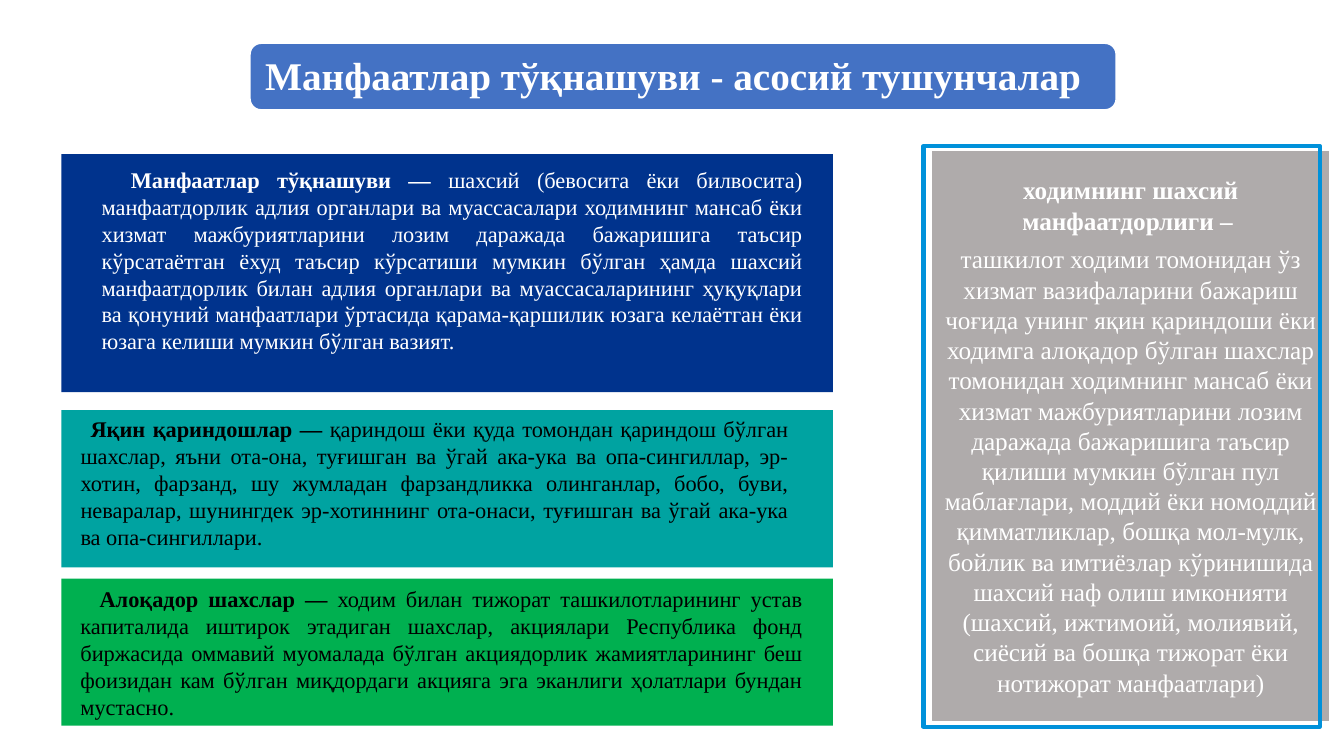
from pptx import Presentation
from pptx.dml.color import RGBColor
from pptx.enum.shapes import MSO_SHAPE
from pptx.enum.text import MSO_ANCHOR, MSO_AUTO_SIZE, PP_ALIGN
from pptx.util import Inches, Pt

RECTANGLE, ROUNDED = MSO_SHAPE.RECTANGLE, MSO_SHAPE.ROUNDED_RECTANGLE
MIDDLE, TOP = MSO_ANCHOR.MIDDLE, MSO_ANCHOR.TOP
LEFT, CENTER, JUSTIFY = PP_ALIGN.LEFT, PP_ALIGN.CENTER, PP_ALIGN.JUSTIFY
FIXED = MSO_AUTO_SIZE.NONE

FONT = "Times New Roman"
COLORS = {
    "white": "FFFFFF", "black": "000000", "banner": "4472C4", "navy": "00338D",
    "teal": "00A3A1", "green": "00B050", "gray": "AFABAB", "frame": "0091DA",
}

TITLE = "Манфаатлар тўқнашуви - асосий тушунчалар"
DEFINITIONS = [
    {
        "term": "Манфаатлар тўқнашуви — ",
        "meaning": "шахсий (бевосита ёки билвосита) манфаатдорлик адлия органлари ва "
                   "муассасалари ходимнинг мансаб ёки хизмат мажбуриятларини лозим даражада "
                   "бажаришига таъсир кўрсатаётган ёхуд таъсир кўрсатиши мумкин бўлган ҳамда "
                   "шахсий манфаатдорлик билан адлия органлари ва муассасаларининг ҳуқуқлари "
                   "ва қонуний манфаатлари ўртасида қарама-қаршилик юзага келаётган ёки юзага "
                   "келиши мумкин бўлган вазият.",
        "fill": "navy", "color": "white", "top": 1.53, "height": 2.36,
        "text_box": (0.91, 1.6, 7.15, 2.22), "indent": 0.29,
    },
    {
        "term": "Яқин қариндошлар — ",
        "meaning": "қариндош ёки қуда томондан қариндош бўлган шахслар, яъни ота-она, "
                   "туғишган ва ўгай ака-ука ва опа-сингиллар, эр-хотин, фарзанд, шу жумладан "
                   "фарзандликка олинганлар, бобо, буви, неваралар, шунингдек эр-хотиннинг "
                   "ота-онаси, туғишган ва ўгай ака-ука ва опа-сингиллари.",
        "fill": "teal", "color": "black", "top": 4.07, "height": 1.56,
        "text_box": (0.7, 4.07, 7.22, 1.72), "indent": 0.1,
    },
    {
        "term": "Алоқадор шахслар — ",
        "meaning": "ходим билан тижорат ташкилотларининг устав капиталида иштирок этадиган "
                   "шахслар, акциялари Республика фонд биржасида оммавий муомалада бўлган "
                   "акциядорлик жамиятларининг беш фоизидан кам бўлган миқдордаги акцияга эга "
                   "эканлиги ҳолатлари бундан мустасно.",
        "fill": "green", "color": "black", "top": 5.74, "height": 1.46,
        "text_box": (0.7, 5.76, 7.36, 1.68), "indent": 0.19,
    },
]
INTEREST = [
    ("ходимнинг шахсий манфаатдорлиги – ", True),
    ("ташкилот ходими томонидан ўз хизмат вазифаларини бажариш чоғида унинг яқин "
     "қариндоши ёки ходимга алоқадор бўлган шахслар томонидан ходимнинг мансаб ёки хизмат "
     "мажбуриятларини лозим даражада бажаришига таъсир қилиши мумкин бўлган пул маблағлари, "
     "моддий ёки номоддий қимматликлар, бошқа мол-мулк, бойлик ва имтиёзлар кўринишида "
     "шахсий наф олиш имконияти (шахсий, ижтимоий, молиявий, сиёсий ва бошқа тижорат ёки "
     "нотижорат манфаатлари)", False),
]

COLUMN_LEFT, COLUMN_WIDTH = 0.61, 7.65
BANNER_BOX, TITLE_BOX = (2.48, 0.43, 8.59, 0.66), (2.51, 0.47, 8.53, 0.6)
PANEL_BOX, FRAME_BOX = (9.25, 1.5, 3.93, 5.65), (9.16, 1.45, 3.93, 5.76)


def color(name):
    return RGBColor.from_string(COLORS[name])


def inches(box):
    return [Inches(length) for length in box]


def add_block(page, box, fill=None, line=None, weight=1, kind=RECTANGLE):
    block = page.shapes.add_shape(kind, *inches(box))
    block.shadow.inherit = False
    for part, name in ((block.fill, fill), (block.line.fill, line)):
        if name:
            part.solid()
            part.fore_color.rgb = color(name)
        else:
            part.background()
    if line:
        block.line.width = Pt(weight)
    return block


def set_frame(frame, anchor, margin=None):
    frame.word_wrap = True
    frame.auto_size = FIXED
    frame.vertical_anchor = anchor
    if margin is not None:
        frame.margin_left = frame.margin_right = Inches(margin)
        frame.margin_top = frame.margin_bottom = Inches(margin)


def style(para, size, name, align, bold=None):
    para.alignment = align
    para.font.name, para.font.size, para.font.bold = FONT, Pt(size), bold
    para.font.color.rgb = color(name)


def add_title(page):
    add_block(page, BANNER_BOX, "banner", "white", kind=ROUNDED)
    title = page.shapes.title
    page.shapes._spTree.append(title._element)
    title.left, title.top, title.width, title.height = inches(TITLE_BOX)
    title.text_frame.text = TITLE
    set_frame(title.text_frame, MIDDLE, 0.12)
    para = title.text_frame.paragraphs[0]
    style(para, 28, "white", LEFT, True)
    para.line_spacing = 0.9


def add_definition(page, item):
    add_block(page, (COLUMN_LEFT, item["top"], COLUMN_WIDTH, item["height"]), item["fill"])
    box = page.shapes.add_textbox(*inches(item["text_box"]))
    set_frame(box.text_frame, TOP)
    para = box.text_frame.paragraphs[0]
    style(para, 16, item["color"], JUSTIFY)
    properties = para._p.get_or_add_pPr()
    properties.set("marL", "0")
    properties.set("indent", str(Inches(item["indent"])))
    for text, bold in ((item["term"], True), (item["meaning"], False)):
        span = para.add_run()
        span.text = text
        span.font.bold = bold


def add_interest(page):
    frame = add_block(page, PANEL_BOX, "gray", "gray").text_frame
    set_frame(frame, MIDDLE, 0.06)
    for index, (text, bold) in enumerate(INTEREST):
        para = frame.add_paragraph() if index else frame.paragraphs[0]
        para.text = text
        style(para, 18, "white", CENTER, bold)
        para.space_before = Pt(6)
    add_block(page, FRAME_BOX, line="frame", weight=3)


def main():
    deck = Presentation()
    deck.slide_width, deck.slide_height = Inches(13.33), Inches(7.5)
    page = deck.slides.add_slide(deck.slide_layouts[5])
    add_title(page)
    for item in DEFINITIONS:
        add_definition(page, item)
    add_interest(page)
    deck.save("out.pptx")


if __name__ == "__main__":
    main()
